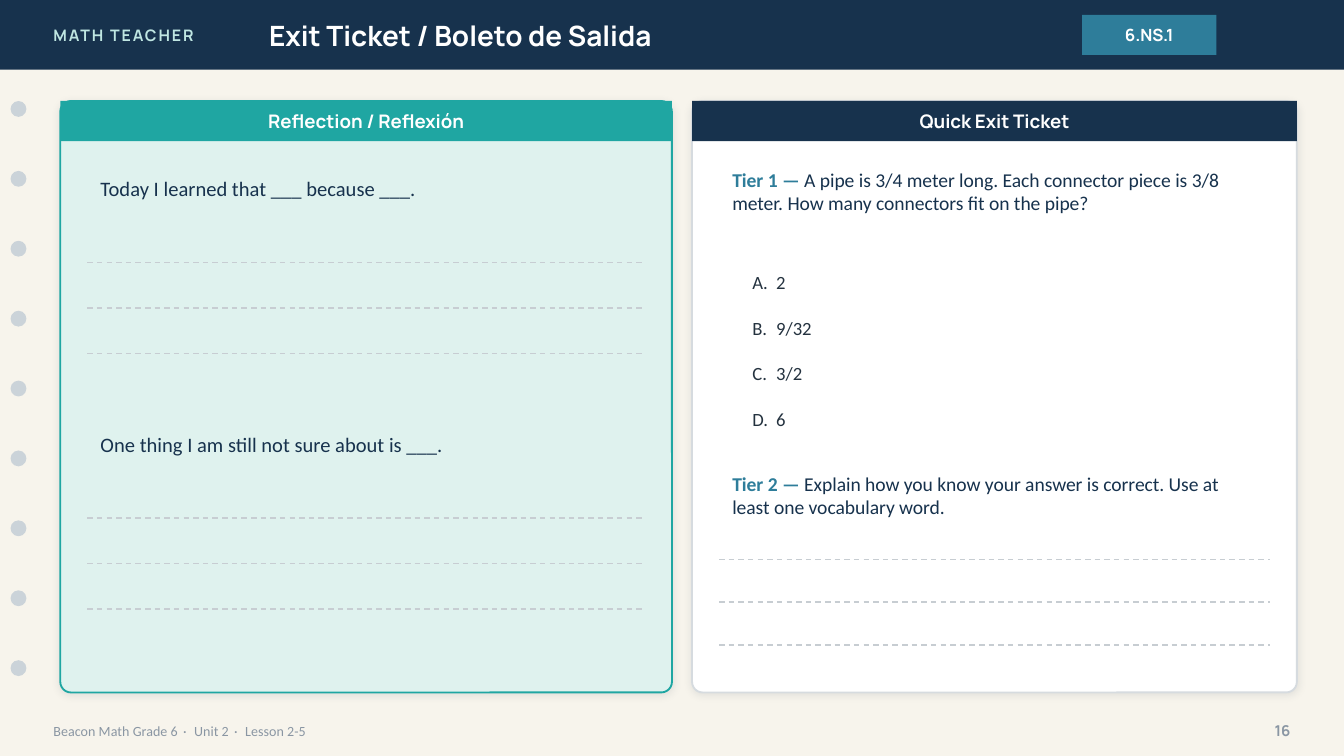
from lxml import etree
from pptx import Presentation
from pptx import util as u
from pptx.dml.color import RGBColor
from pptx.enum import dml, shapes, text
from pptx.oxml.ns import qn

C = {
    "paper": "F7F4EC", "navy": "17324D", "mint": "BFE6E2", "white": "FFFFFF",
    "blue": "2E7D9A", "hole": "CBD3D9", "muted": "8A96A3", "teal": "1FA6A2",
    "pale": "DFF2EE", "border": "D6DBDF", "rule": "C7CDD2", "ink": "24323F",
    "shadow": "1C2E42",
}
LEFT, CENTER, RIGHT = text.PP_ALIGN.LEFT, text.PP_ALIGN.CENTER, text.PP_ALIGN.RIGHT
TOP, MIDDLE = text.MSO_ANCHOR.TOP, text.MSO_ANCHOR.MIDDLE
SHAPE = shapes.MSO_SHAPE


def rgb(name):
    return RGBColor.from_string(C[name])


def cm(*values):
    return [u.Cm(v) for v in values]


def style(r, size, color, font="Calibri", bold=False, spacing=None):
    r.font.size, r.font.name, r.font.bold = u.Pt(size), font, bold
    r.font.color.rgb = rgb(color)
    if spacing:
        r.font._element.set("spc", str(spacing))


def write(sp, runs, align=LEFT, anchor=MIDDLE):
    tf = sp.text_frame
    tf.word_wrap = True
    tf.auto_size = text.MSO_AUTO_SIZE.NONE
    tf.vertical_anchor = anchor
    p = tf.paragraphs[0]
    p.alignment = align
    for words, look in runs:
        r = p.add_run()
        r.text = words
        style(r, **look)
    return p


def add_text(s, box, runs, align=LEFT, anchor=MIDDLE):
    return write(s.shapes.add_textbox(*cm(*box)), runs, align, anchor)


def add_block(s, kind, box, fill, line=None):
    sp = s.shapes.add_shape(kind, *cm(*box))
    sp.shadow.inherit = False
    sp.fill.solid()
    sp.fill.fore_color.rgb = rgb(fill)
    if line:
        sp.line.color.rgb = rgb(line)
        sp.line.width = u.Pt(1)
    else:
        sp.line.fill.background()
    return sp


def heading(size, color, spacing=None):
    return dict(size=size, color=color, font="Manrope", bold=True, spacing=spacing)


def add_soft_shadow(sp):
    effects = sp._element.spPr.find(qn("a:effectLst"))
    shadow = etree.SubElement(effects, qn("a:outerShdw"), blurRad="50800",
                              dist="12700", dir="5400000", algn="bl", rotWithShape="0")
    color = etree.SubElement(shadow, qn("a:srgbClr"), val=C["shadow"])
    etree.SubElement(color, qn("a:alpha"), val="10000")


def add_writing_lines(s, x, y, w, step, count=3):
    for i in range(count):
        line_y = y + i * step
        cx = s.shapes.add_connector(shapes.MSO_CONNECTOR.STRAIGHT,
                                    *cm(x, line_y, x + w, line_y))
        cx.line.color.rgb = rgb("rule")
        cx.line.width = u.Pt(0.75)
        cx.line.dash_style = dml.MSO_LINE.DASH
        etree.SubElement(cx._element.spPr, qn("a:effectLst"))


def add_header(s, box):
    x, y, w, h = box
    bar = add_block(s, SHAPE.RECTANGLE, box, "navy")
    title = s.shapes.title
    bar._element.addnext(title._element)
    title.left, title.top, title.width, title.height = cm(x + 4.83, y, 14.22, h)
    write(title, [("Exit Ticket / Boleto de Salida", heading(15, "white"))])
    add_text(s, (x + 0.76, y, 6.1, h), [("MATH TEACHER", heading(8.5, "mint", 100))])
    badge = add_block(s, SHAPE.RECTANGLE, (x + 20.45, y + 0.28, 2.54, 0.76), "blue")
    write(badge, [("6.NS.1", heading(9, "white"))], CENTER)


def add_binder_holes(s, box, count=9):
    x, y, w, h = box
    step = (h - w) / (count - 1)
    for i in range(count):
        add_block(s, SHAPE.OVAL, (x, y + i * step, w, w), "hole")


def add_footer(s, box):
    x, y, w, h = box
    plain = dict(size=7.5, color="muted")
    dot = (" · ", dict(plain, spacing=113))
    add_text(s, (x, y, 17.78, h), [("Beacon Math Grade 6", plain), dot,
                                   ("Unit 2", plain), dot, ("Lesson 2-5", plain)])
    add_text(s, (x + w - 1.27, y, 1.27, h), [("16", heading(8, "muted"))], RIGHT)


def add_card(s, box, label, fill, accent, border):
    x, y, w, h = box
    card = add_block(s, SHAPE.ROUNDED_RECTANGLE, box, fill, border)
    card.adjustments[0] = 0.018
    add_soft_shadow(card)
    band = add_block(s, SHAPE.RECTANGLE, (x, y, w, 0.76), accent)
    write(band, [(label, heading(10, "white"))], CENTER)
    return x + 0.51, y, w - 1.02


def add_reflection(s, box):
    x, y, w = add_card(s, box, "Reflection / Reflexión", "pale", "teal", "teal")
    prompts = ["Today I learned that ___ because ___.",
               "One thing I am still not sure about is ___."]
    for i, prompt in enumerate(prompts):
        top = y + 1.14 + i * 4.83
        add_text(s, (x, top, w, 1.02), [(prompt, dict(size=11, color="navy"))])
        add_writing_lines(s, x, top + 1.91, w, 0.86)


def add_tier(s, box, label, question):
    add_text(s, box, [(label, dict(size=10.5, color="blue", bold=True)),
                      (question, dict(size=10.5, color="navy"))], anchor=TOP)


def add_exit_ticket(s, box):
    x, y, w = add_card(s, box, "Quick Exit Ticket", "white", "navy", "border")
    add_tier(s, (x, y + 1.14, w, 1.78), "Tier 1 — ",
             "A pipe is 3/4 meter long. Each connector piece is 3/8 meter. "
             "How many connectors fit on the pipe?")
    for i, (letter, answer) in enumerate(zip("ABCD", ["2", "9/32", "3/2", "6"])):
        p = add_text(s, (x + 0.38, y + 3.05 + i * 0.86, 9.91, 0.76),
                     [(f"{letter}.\t{answer}", dict(size=10, color="ink"))])
        tabs = etree.SubElement(p._p.get_or_add_pPr(), qn("a:tabLst"))
        etree.SubElement(tabs, qn("a:tab"), pos=str(u.Cm(0.45)), algn="l")
    add_tier(s, (x, y + 6.88, w, 1.4), "Tier 2 — ",
             "Explain how you know your answer is correct. "
             "Use at least one vocabulary word.")
    add_writing_lines(s, x, y + 8.66, w, 0.81)


def main():
    prs = Presentation()
    prs.slide_width, prs.slide_height = cm(25.4, 14.29)
    s = prs.slides.add_slide(prs.slide_layouts[5])
    s.background.fill.solid()
    s.background.fill.fore_color.rgb = rgb("paper")
    add_header(s, (0, 0, 25.4, 1.32))
    add_binder_holes(s, (0.2, 1.91, 0.3, 10.87))
    add_footer(s, (0.76, 13.46, 23.88, 0.71))
    add_reflection(s, (1.14, 1.91, 11.56, 11.18))
    add_exit_ticket(s, (13.08, 1.91, 11.43, 11.18))
    prs.save("out.pptx")


if __name__ == "__main__":
    main()
